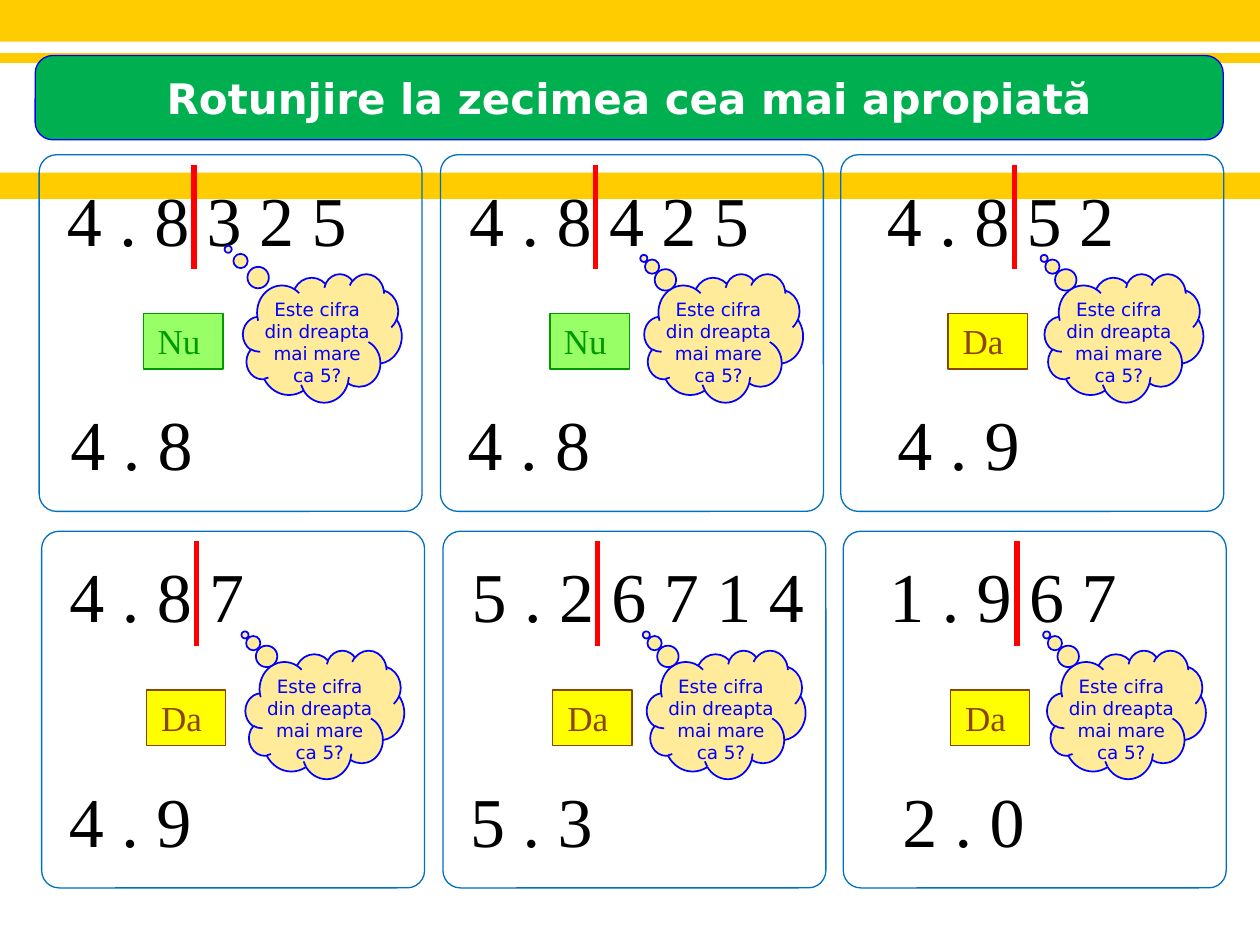
import pptx
import pptx.util
import pptx.dml.color
import pptx.enum.shapes
import pptx.enum.text
import pptx.oxml.ns
from dataclasses import dataclass
from lxml import etree

Cm = pptx.util.Cm
Pt = pptx.util.Pt
Kind = pptx.enum.shapes.MSO_SHAPE
Align = pptx.enum.text.PP_ALIGN


@dataclass(frozen=True)
class Theme:
    sans: str = "DejaVu Sans"
    serif: str = "Times New Roman"
    band: str = "FFCC00"
    green: str = "00B050"
    blue: str = "0000FF"
    edge: str = "0070C0"
    red: str = "FF0000"
    cream: str = "FFEB99"
    white: str = "FFFFFF"
    black: str = "000000"
    no: tuple = ("99FF66", "009900")
    yes: tuple = ("FFFF00", "8B4500")
    title: float = 24
    digit: float = 40
    tag: float = 20
    note: float = 10.5
    thin: float = 0.75
    bold: float = 3


T = Theme()

# Card grid, in cm
LEFTS = (0.79, 8.88, 16.95)
TOP, STEP, SHIFT = 3.12, 7.59, 0.05
# Per column, from the card's left edge: bar, number, tag
INSETS = ((3.12, 0.31, 2.11), (3.12, 0.33, 2.21), (3.5, 0.68, 2.16))
ASK = "Este cifra din dreapta mai mare ca 5?"
NEAR = (-0.503, -0.62)
FAR = (-0.594, -0.691)

# Number, answer, rounded number, its inset, callout tip
ROWS = (
    (("4 . 8 3 2 5", "Nu", "4 . 8", 0.38, FAR),
     ("4 . 8 4 2 5", "Nu", "4 . 8", 0.3, NEAR),
     ("4 . 8 5 2", "Da", "4 . 9", 0.89, NEAR)),
    (("4 . 8 7", "Da", "4 . 9", 0.3, NEAR),
     ("5 . 2 6 7 1 4", "Da", "5 . 3", 0.3, NEAR),
     ("1 . 9 6 7", "Da", "2 . 0", 0.94, NEAR)),
)


def tint(code):
    return pptx.dml.color.RGBColor.from_string(code)


def shape(host, kind, box, fill=None, line=None, width=T.thin, adj=()):
    item = host.add_shape(kind, *map(Cm, box))
    item.shadow.inherit = False
    if fill:
        item.fill.solid()
        item.fill.fore_color.rgb = tint(fill)
    else:
        item.fill.background()
    if line:
        item.line.color.rgb = tint(line)
        item.line.width = Pt(width)
    else:
        item.line.fill.background()
    for i, value in enumerate(adj):
        item.adjustments[i] = value
    return item


def write(item, text, font, size, color, align=Align.LEFT, bold=False,
          lead=False, grow=True):
    frame = item.text_frame
    frame.word_wrap = True
    frame.vertical_anchor = pptx.enum.text.MSO_ANCHOR.TOP
    if grow:
        frame.auto_size = pptx.enum.text.MSO_AUTO_SIZE.SHAPE_TO_FIT_TEXT
    para = frame.paragraphs[0]
    para.text = text
    para.alignment = align
    para.font.name = font
    para.font.size = Pt(size)
    para.font.bold = bold
    para.font.color.rgb = tint(color)
    if lead:
        # Space before as half a line
        para.space_before = Pt(0)
        gap = para._p.pPr.find(pptx.oxml.ns.qn("a:spcBef"))
        gap.remove(gap[0])
        etree.SubElement(gap, pptx.oxml.ns.qn("a:spcPct"), val="50000")
    return frame


def number(host, x, y, text):
    wide = 7.44 if len(text) > 11 else 6.15
    item = host.add_textbox(*map(Cm, (x, y, wide, 1.96)))
    write(item, text, T.serif, T.digit, T.black, lead=True)


def bar(host, x, y):
    item = host.add_connector(pptx.enum.shapes.MSO_CONNECTOR.STRAIGHT,
                              Cm(x), Cm(y), Cm(x), Cm(y + 2.11))
    item.line.color.rgb = tint(T.red)
    item.line.width = Pt(T.bold)
    etree.SubElement(item._element.spPr, pptx.oxml.ns.qn("a:effectLst"))


def tag(host, x, y, text):
    fill, ink = T.no if text == "Nu" else T.yes
    item = shape(host, Kind.RECTANGLE, (x, y, 1.6, 1.12), fill, ink)
    frame = write(item, text, T.serif, T.tag, ink, Align.CENTER, lead=True)
    frame.margin_right = Cm(0.43)


def cloud(host, x, y, tip):
    group = host.add_group_shape().shapes
    shape(group, Kind.CLOUD_CALLOUT, (x, y, 3.2, 2.59), T.cream, T.blue, 1, tip)
    label = group.add_textbox(*map(Cm, (x + 0.16, y + 0.37, 2.67, 2.06)))
    write(label, ASK, T.sans, T.note, T.blue, Align.CENTER)


def card(host, x, y, inset, data):
    dbar, dnum, dtag = inset
    text, reply, result, dres, tip = data
    shape(host, Kind.ROUNDED_RECTANGLE, (x, y, 7.72, 7.19), None, T.edge,
          adj=(0.049,))
    bar(host, x + dbar, y + 0.2)
    number(host, x + dnum, y + 0.31, text)
    tag(host, x + dtag, y + 3.2, reply)
    cloud(host, x + 4.11, y + 2.4, tip)
    number(host, x + dres, y + 4.83, result)


def main():
    deck = pptx.Presentation()
    deck.slide_width, deck.slide_height = Cm(25.4), Cm(19.05)
    host = deck.slides.add_slide(deck.slide_layouts[6]).shapes

    # Background bands
    for y, high in ((0, 0.84), (3.48, 0.53), (1.07, 0.2)):
        shape(host, Kind.RECTANGLE, (0, y, 25.4, high), T.band)

    # Title
    head = shape(host, Kind.ROUNDED_RECTANGLE, (0.71, 1.12, 23.95, 1.7),
                 T.green, T.blue, adj=(0.211,))
    frame = write(head, "Rotunjire la zecimea cea mai apropiată", T.sans,
                  T.title, T.white, Align.CENTER, bold=True, grow=False)
    frame.vertical_anchor = pptx.enum.text.MSO_ANCHOR.MIDDLE

    # Cards
    for r, row in enumerate(ROWS):
        for left, inset, data in zip(LEFTS, INSETS, row):
            card(host, left + r * SHIFT, TOP + r * STEP, inset, data)

    deck.save("out.pptx")


if __name__ == "__main__":
    main()
